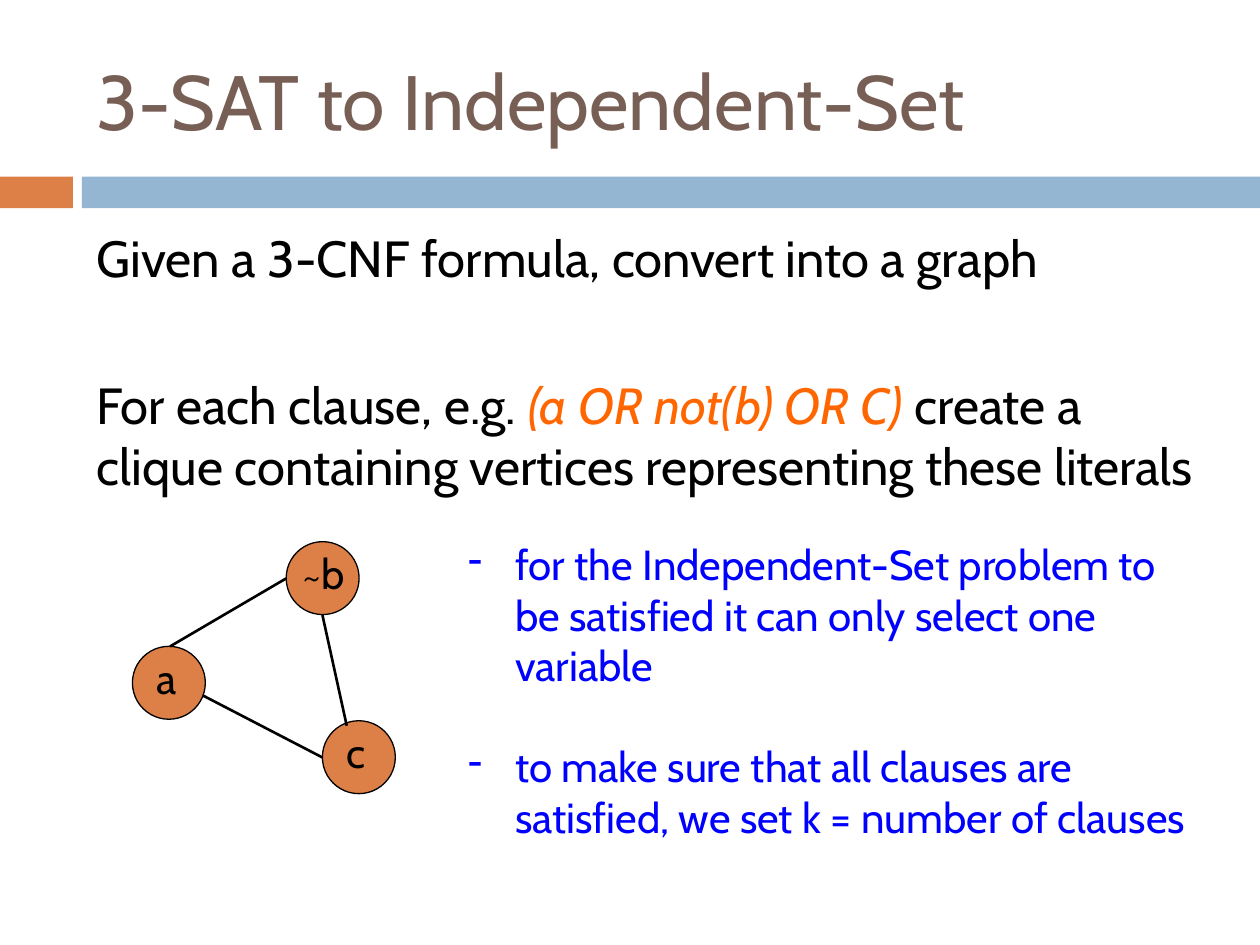
"""Build the slide that reduces 3-SAT to Independent-Set."""
from lxml import etree
from pptx import Presentation
from pptx.dml.color import RGBColor
from pptx.enum.shapes import MSO_CONNECTOR, MSO_SHAPE
from pptx.enum.text import MSO_ANCHOR
from pptx.oxml.ns import qn
from pptx.util import Cm, Pt

RECT = MSO_SHAPE.RECTANGLE
OVAL = MSO_SHAPE.OVAL
LINE = MSO_CONNECTOR.STRAIGHT
TOP = MSO_ANCHOR.TOP
MIDDLE = MSO_ANCHOR.MIDDLE

HUES = {
    "orange": "DD8047",
    "blue": "94B6D2",
    "brown": "775F55",
    "black": "000000",
    "clause": "FF6600",
    "note": "0000FF",
}


def hue(name):
    return RGBColor.from_string(HUES[name])


def add_text(home, box, paras, size=24, color="black", anchor=TOP, gap=0, dash=False):
    frame = home.add_textbox(*map(Cm, box)).text_frame
    frame.word_wrap = True
    frame.vertical_anchor = anchor
    for i, runs in enumerate(paras):
        para = frame.add_paragraph() if i else frame.paragraphs[0]
        para.space_before = Pt(gap if i else 0)
        if dash:
            props = para._p.get_or_add_pPr()
            props.set("marL", str(Cm(0.95)))
            props.set("indent", str(-Cm(0.95)))
            etree.SubElement(props, qn("a:buChar")).set("char", "-")
        for words, tone in runs:
            run = para.add_run()
            run.text = words
            run.font.name = "Cabin"
            run.font.size = Pt(size)
            run.font.italic = tone == "clause"
            run.font.color.rgb = hue(tone or color)


deck = Presentation()
deck.slide_width, deck.slide_height = Cm(25.4), Cm(19.05)
slide = deck.slides.add_slide(deck.slide_layouts[6])
shapes = slide.shapes

for left, width, tone in [(0, 1.47, "orange"), (1.65, 23.75, "blue")]:
    band = shapes.add_shape(RECT, Cm(left), Cm(3.56), Cm(width), Cm(0.64))
    band.shadow.inherit = False
    band.fill.solid()
    band.fill.fore_color.rgb = hue(tone)
    band.line.fill.background()

add_text(shapes, (1.7, 0.64, 22.66, 2.74), [[("3-SAT to Independent-Set", None)]],
         size=44, color="brown", anchor=MIDDLE)

body = [
    [("Given a 3-CNF formula, convert into a graph", None)],
    [("For each clause, e.g. ", None),
     ("(a OR not(b) OR C) ", "clause"),
     ("create a clique containing vertices representing these literals", None)],
]
add_text(shapes, (1.7, 4.45, 22.66, 6.35), body, size=29, gap=49)

nodes = [
    ("a", 2.67, 13.03, 0.23, 1.27),
    ("~b", 5.77, 10.92, 0.08, 2.13),
    ("c", 6.5, 14.53, 0.23, 1.27),
]
for name, left, top, shift, width in nodes:
    group = shapes.add_group_shape().shapes
    node = group.add_shape(OVAL, Cm(left), Cm(top), Cm(1.47), Cm(1.47))
    node.shadow.inherit = False
    node.fill.solid()
    node.fill.fore_color.rgb = hue("orange")
    node.line.color.rgb = hue("black")
    node.line.width = Pt(0.75)
    add_text(group, (left + shift, top, width, 1.27), [[(name, None)]])

edges = [
    (3.43, 13.03, 5.77, 11.66),
    (4.09, 14.02, 6.5, 15.27),
    (6.5, 12.4, 6.99, 14.63),
]
for ends in edges:
    edge = shapes.add_connector(LINE, *map(Cm, ends))
    edge.line.color.rgb = hue("black")
    edge.line.width = Pt(1.5)
    etree.SubElement(edge._element.spPr, qn("a:effectLst"))

notes = [
    [("for the Independent-Set problem to be satisfied it can only select one variable", None)],
    [("to make sure that all clauses are satisfied, we set k = number of clauses", None)],
]
add_text(shapes, (9.19, 10.74, 15.14, 5.38), notes, color="note", gap=29, dash=True)

deck.save("out.pptx")
